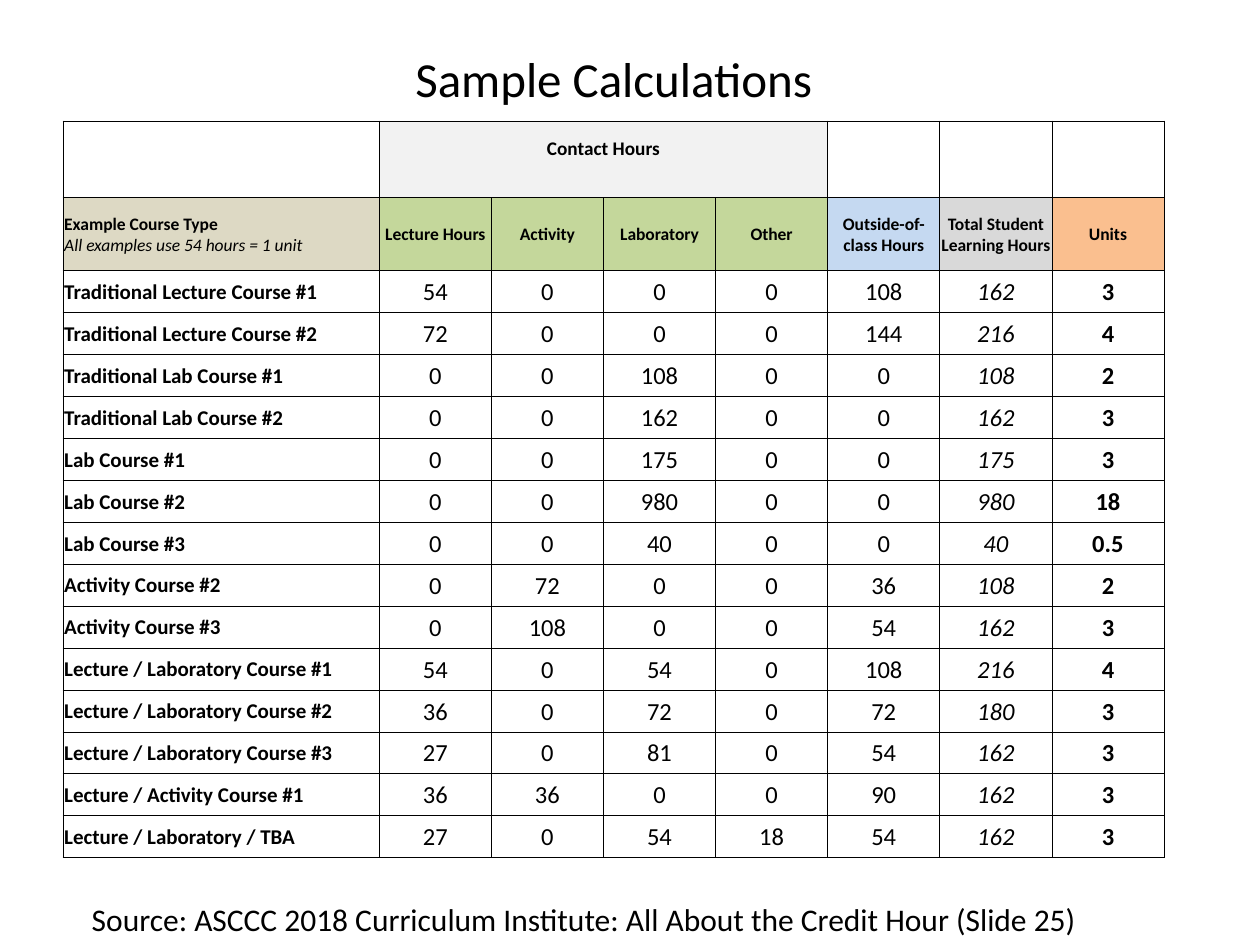
from lxml.etree import SubElement
from pptx import Presentation
from pptx.dml.color import RGBColor
from pptx.enum.text import MSO_ANCHOR as Anchor, PP_ALIGN as Align
from pptx.oxml.ns import qn
from pptx.util import Inches, Pt

BLACK = RGBColor(0x00, 0x00, 0x00)
PALE = RGBColor(0xF2, 0xF2, 0xF2)
TAN = RGBColor(0xDD, 0xD9, 0xC4)
GREEN = RGBColor(0xC4, 0xD7, 0x9B)
BLUE = RGBColor(0xC5, 0xD9, 0xF1)
GRAY = RGBColor(0xD9, 0xD9, 0xD9)
ORANGE = RGBColor(0xFA, 0xBF, 0x8F)

LEFT, TOP, WIDTH, HEIGHT = 0.5, 0.96, 8.74, 5.85
HOURS_W = 0.89
BAND_H, HEAD_H = 0.61, 0.58

HEADS = [
    ("Lecture Hours", GREEN), ("Activity", GREEN), ("Laboratory", GREEN),
    ("Other", GREEN), ("Outside-of-class Hours", BLUE),
    ("Total Student Learning Hours", GRAY), ("Units", ORANGE),
]
COURSES = [
    ("Traditional Lecture Course #1", 54, 0, 0, 0, 108, 162, 3),
    ("Traditional Lecture Course #2", 72, 0, 0, 0, 144, 216, 4),
    ("Traditional Lab Course #1", 0, 0, 108, 0, 0, 108, 2),
    ("Traditional Lab Course #2", 0, 0, 162, 0, 0, 162, 3),
    ("Lab Course #1", 0, 0, 175, 0, 0, 175, 3),
    ("Lab Course #2", 0, 0, 980, 0, 0, 980, 18),
    ("Lab Course #3", 0, 0, 40, 0, 0, 40, 0.5),
    ("Activity Course #2", 0, 72, 0, 0, 36, 108, 2),
    ("Activity Course #3", 0, 108, 0, 0, 54, 162, 3),
    ("Lecture / Laboratory Course #1", 54, 0, 54, 0, 108, 216, 4),
    ("Lecture / Laboratory Course #2", 36, 0, 72, 0, 72, 180, 3),
    ("Lecture / Laboratory Course #3", 27, 0, 81, 0, 54, 162, 3),
    ("Lecture / Activity Course #1", 36, 36, 0, 0, 90, 162, 3),
    ("Lecture / Laboratory / TBA", 27, 0, 54, 18, 54, 162, 3),
]

BASE = {"name": "Calibri", "bold": False, "italic": False}
BOLD = {"bold": True}
ITALIC = {"italic": True}
NUMBER_LOOKS = [{}] * 5 + [ITALIC, BOLD]


def write(para, text, size, look={}, align=Align.LEFT):
    para.alignment = align
    run = para.add_run()
    run.text = text
    for key, value in {**BASE, "size": Pt(size), **look}.items():
        setattr(run.font, key, value)
    run.font.color.rgb = BLACK


def add_label(slide, box, text, size, align=Align.LEFT, anchor=Anchor.TOP):
    frame = slide.shapes.add_textbox(*map(Inches, box)).text_frame
    frame.word_wrap = True
    frame.vertical_anchor = anchor
    write(frame.paragraphs[0], text, size, align=align)


def style_cell(cell):
    """Give a cell thin black borders, tight margins and no fill."""
    props = cell._tc.get_or_add_tcPr()
    for side in ("lnL", "lnR", "lnT", "lnB"):
        line = SubElement(props, qn(f"a:{side}"), w=str(Pt(0.5)))
        fill = SubElement(line, qn("a:solidFill"))
        SubElement(fill, qn("a:srgbClr"), val=str(BLACK))
    for side in ("left", "right", "top"):
        setattr(cell, f"margin_{side}", Inches(0.01))
    cell.margin_bottom = 0
    cell.vertical_anchor = Anchor.MIDDLE
    cell.fill.background()


def paint(cell, color):
    cell.fill.solid()
    cell.fill.fore_color.rgb = color


def fill_heads(table):
    band = table.cell(0, 1)
    band.merge(table.cell(0, 4))
    paint(band, PALE)
    band.margin_bottom = Inches(0.18)
    write(band.text_frame.paragraphs[0], "Contact Hours", 11, BOLD, Align.CENTER)

    kind = table.cell(1, 0)
    paint(kind, TAN)
    frame = kind.text_frame
    write(frame.paragraphs[0], "Example Course Type", 10, BOLD)
    write(frame.add_paragraph(), "All examples use 54 hours = 1 unit", 10, ITALIC)

    for col, (text, color) in enumerate(HEADS, 1):
        cell = table.cell(1, col)
        paint(cell, color)
        write(cell.text_frame.paragraphs[0], text, 10, BOLD, Align.CENTER)


def fill_courses(table):
    for row, (name, *values) in enumerate(COURSES, 2):
        write(table.cell(row, 0).text_frame.paragraphs[0], name, 12, BOLD)
        for col, (value, look) in enumerate(zip(values, NUMBER_LOOKS), 1):
            para = table.cell(row, col).text_frame.paragraphs[0]
            write(para, str(value), 14, look, Align.CENTER)


def add_hours(slide):
    box = map(Inches, (LEFT, TOP, WIDTH, HEIGHT))
    table = slide.shapes.add_table(len(COURSES) + 2, len(HEADS) + 1, *box).table
    table.first_row = table.horz_banding = False
    widths = [WIDTH - HOURS_W * len(HEADS)] + [HOURS_W] * len(HEADS)
    for col, width in zip(table.columns, widths):
        col.width = Inches(width)
    course_h = (HEIGHT - BAND_H - HEAD_H) / len(COURSES)
    heights = [BAND_H, HEAD_H] + [course_h] * len(COURSES)
    for row, height in zip(table.rows, heights):
        row.height = Inches(height)
    for cell in table.iter_cells():
        style_cell(cell)
    fill_heads(table)
    fill_courses(table)


def main():
    deck = Presentation()
    deck.slide_width, deck.slide_height = Inches(10), Inches(7.5)
    slide = deck.slides.add_slide(deck.slide_layouts[6])
    add_label(slide, (LEFT, 0.3, WIDTH, 0.64), "Sample Calculations", 28,
              Align.CENTER, Anchor.MIDDLE)
    add_hours(slide)
    add_label(slide, (0.63, 7.09, 8.37, 0.4),
              "Source: ASCCC 2018 Curriculum Institute: "
              "All About the Credit Hour (Slide 25)", 18)
    deck.save("out.pptx")


if __name__ == "__main__":
    main()
